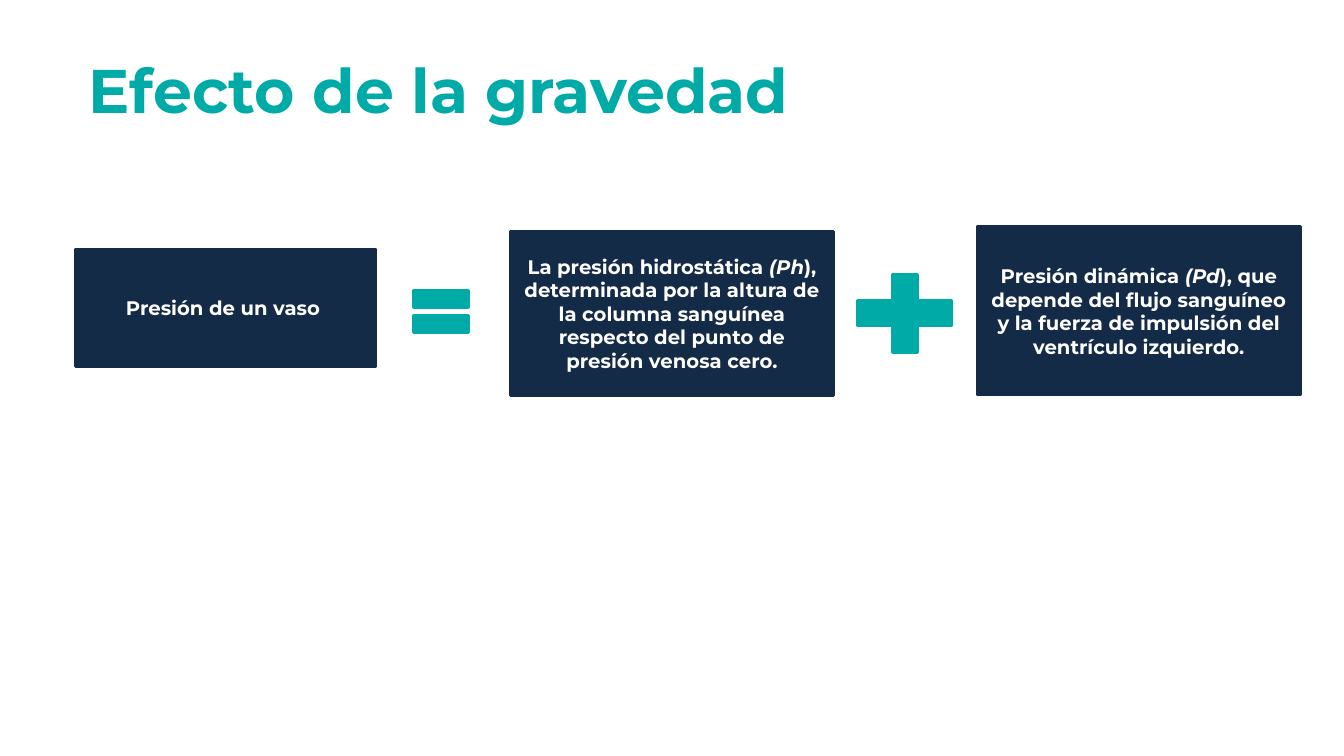
from dataclasses import dataclass

from pptx import Presentation
from pptx.dml.color import RGBColor
from pptx.enum.shapes import MSO_SHAPE as Preset
from pptx.enum.text import MSO_ANCHOR as Anchor, PP_ALIGN as Align
from pptx.shapes.autoshape import Shape
from pptx.slide import Slide
from pptx.text.text import Font
from pptx.util import Inches, Pt


@dataclass(frozen=True)
class Theme:
    font: str = "Montserrat"
    title_color: RGBColor = RGBColor(0x00, 0xAA, 0xA7)
    operator_color: RGBColor = RGBColor(0x00, 0xAB, 0xA7)
    term_color: RGBColor = RGBColor(0x14, 0x2B, 0x48)
    term_text: RGBColor = RGBColor(0xFF, 0xFF, 0xFF)
    title_size: int = 44
    term_size: int = 14
    outline: int = 2


@dataclass(frozen=True)
class Box:
    left: float
    top: float
    width: float
    height: float

    def lengths(self) -> list[Inches]:
        return [Inches(v) for v in (self.left, self.top, self.width, self.height)]


@dataclass(frozen=True)
class Term:
    box: Box
    before: str
    symbol: str = ""
    after: str = ""


@dataclass(frozen=True)
class Operator:
    box: Box
    preset: Preset


THEME = Theme()
TITLE = "Efecto de la gravedad"
TITLE_BOX = Box(0.78, 0.2, 11.5, 1.45)
TERMS = (
    Term(Box(0.75, 2.47, 2.98, 1.17), "Presión de un vaso "),
    Term(
        Box(5.06, 2.3, 3.21, 1.62),
        "La presión hidrostática ",
        "(Ph",
        "), determinada por la altura de la columna sanguínea "
        "respecto del punto de presión venosa cero.",
    ),
    Term(
        Box(9.69, 2.25, 3.21, 1.67),
        "Presión dinámica ",
        "(Pd",
        "), que depende del flujo sanguíneo y la fuerza de impulsión "
        "del ventrículo izquierdo.",
    ),
)
OPERATORS = (
    Operator(Box(4, 2.74, 0.75, 0.7), Preset.MATH_EQUAL),
    Operator(Box(8.34, 2.58, 1.27, 1.06), Preset.MATH_PLUS),
)


def style_font(font: Font, size: int, color: RGBColor) -> None:
    font.name = THEME.font
    font.size = Pt(size)
    font.bold = True
    font.color.rgb = color


def add_solid(slide: Slide, preset: Preset, box: Box, color: RGBColor) -> Shape:
    """Add a shape whose fill and outline share one colour."""
    solid = slide.shapes.add_shape(preset, *box.lengths())
    solid.shadow.inherit = False
    solid.fill.solid()
    solid.fill.fore_color.rgb = color
    solid.line.color.rgb = color
    solid.line.width = Pt(THEME.outline)
    return solid


def add_title(slide: Slide) -> None:
    frame = slide.shapes.add_textbox(*TITLE_BOX.lengths()).text_frame
    frame.word_wrap = True
    frame.vertical_anchor = Anchor.MIDDLE
    frame.text = TITLE
    heading = frame.paragraphs[0]
    heading.line_spacing = 0.9
    style_font(heading.runs[0].font, THEME.title_size, THEME.title_color)


def add_term(slide: Slide, term: Term) -> None:
    """Add a term of the equation, with its symbol in italics."""
    frame = add_solid(slide, Preset.RECTANGLE, term.box, THEME.term_color).text_frame
    frame.word_wrap = True
    frame.vertical_anchor = Anchor.MIDDLE
    wording = frame.paragraphs[0]
    wording.alignment = Align.CENTER
    for part in filter(None, (term.before, term.symbol, term.after)):
        run = wording.add_run()
        run.text = part
        style_font(run.font, THEME.term_size, THEME.term_text)
        run.font.italic = part == term.symbol


def main() -> None:
    deck = Presentation()
    deck.slide_width, deck.slide_height = Inches(13.33), Inches(7.5)
    slide = deck.slides.add_slide(deck.slide_layouts[6])
    add_title(slide)
    for term in TERMS:
        add_term(slide, term)
    for operator in OPERATORS:
        add_solid(slide, operator.preset, operator.box, THEME.operator_color)
    deck.save("out.pptx")


if __name__ == "__main__":
    main()
